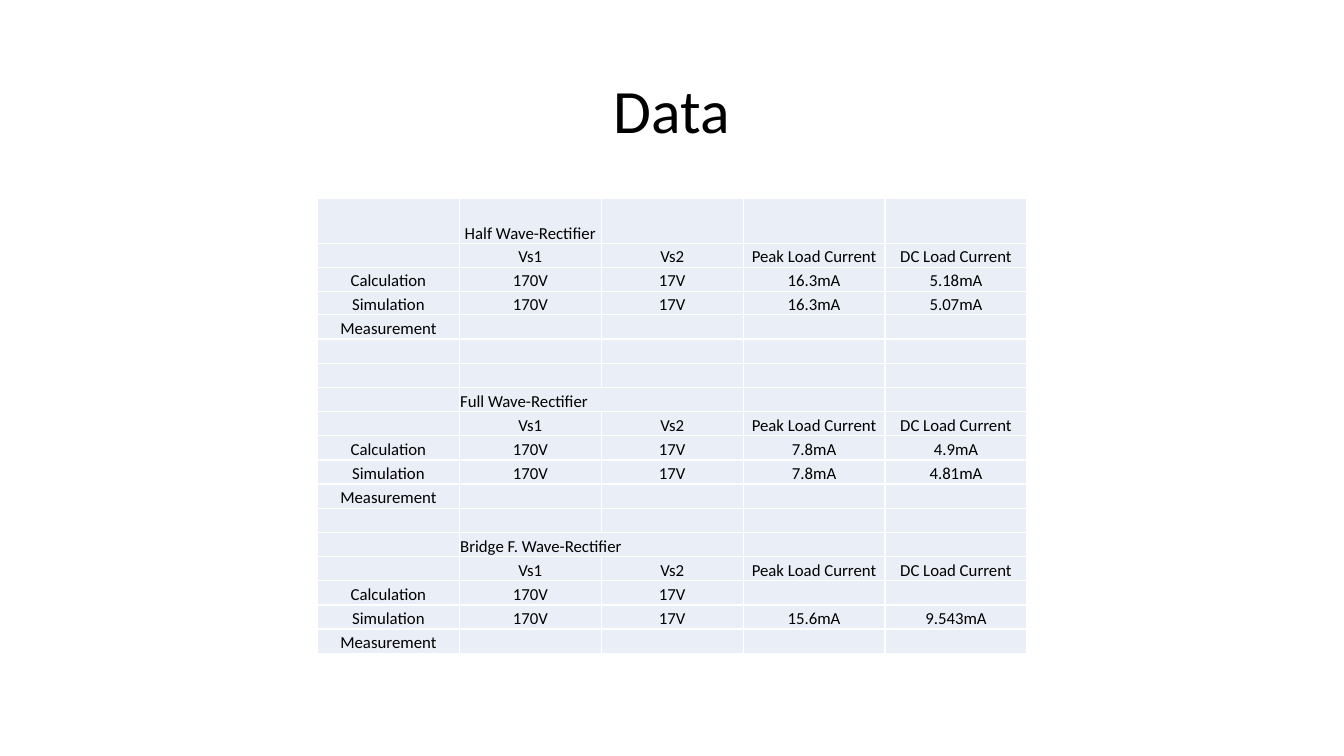
from lxml import etree
from pptx import Presentation
from pptx.dml.color import RGBColor
from pptx.enum.text import MSO_ANCHOR, PP_ALIGN
from pptx.oxml.ns import qn
from pptx.util import Cm, Pt

LEFT, CENTER = PP_ALIGN.LEFT, PP_ALIGN.CENTER
MIDDLE, BOTTOM = MSO_ANCHOR.MIDDLE, MSO_ANCHOR.BOTTOM

TITLE_ONLY = 5
FONT = "Calibri"
TEXT, CELL_FILL, GRID = "000000", "EAEFF7", "FFFFFF"

HEADINGS = ["", "Vs1", "Vs2", "Peak Load Current", "DC Load Current"]
BLANK = [""] * len(HEADINGS)
MEASUREMENT = ["Measurement", "", "", "", ""]


def rectifier_rows(name, calculated, simulated):
    """Rows of one circuit; the load currents are (peak, DC) pairs."""
    return [
        ["", name, "", "", ""],
        HEADINGS,
        ["Calculation", "170V", "17V", *calculated],
        ["Simulation", "170V", "17V", *simulated],
        MEASUREMENT,
    ]


WIDE_NAMES = ["Full Wave-Rectifier", "Bridge F. Wave-Rectifier"]
ROWS = [
    *rectifier_rows("Half Wave-Rectifier", ("16.3mA", "5.18mA"), ("16.3mA", "5.07mA")),
    BLANK,
    BLANK,
    *rectifier_rows(WIDE_NAMES[0], ("7.8mA", "4.9mA"), ("7.8mA", "4.81mA")),
    BLANK,
    *rectifier_rows(WIDE_NAMES[1], ("", ""), ("15.6mA", "9.543mA")),
]
ROW_HEIGHTS = [1.15] + [0.6] * 3 + [0.61] * (len(ROWS) - 4)


def color(hex_code):
    return RGBColor.from_string(hex_code)


def style_paragraph(paragraph, size, alignment):
    paragraph.alignment = alignment
    paragraph.font.name = FONT
    paragraph.font.size = Pt(size)
    paragraph.font.color.rgb = color(TEXT)


def add_borders(cell):
    properties = cell._tc.get_or_add_tcPr()
    for side in ("lnL", "lnR", "lnT", "lnB"):
        border = etree.SubElement(properties, qn(f"a:{side}"), w=str(Pt(1)))
        fill = etree.SubElement(border, qn("a:solidFill"))
        etree.SubElement(fill, qn("a:srgbClr"), val=GRID)


def format_cell(cell, text):
    cell.text = text
    cell.vertical_anchor = BOTTOM
    cell.margin_left = cell.margin_right = cell.margin_top = Cm(0.02)
    cell.margin_bottom = 0
    style_paragraph(cell.text_frame.paragraphs[0], 12,
                    LEFT if text in WIDE_NAMES else CENTER)
    add_borders(cell)
    cell.fill.solid()
    cell.fill.fore_color.rgb = color(CELL_FILL)


def place_title(slide, left, top, width, height):
    title = slide.shapes.title
    title.left, title.top, title.width, title.height = left, top, width, height
    title.text_frame.text = "Data"
    title.text_frame.vertical_anchor = MIDDLE
    heading = title.text_frame.paragraphs[0]
    heading.line_spacing = 0.9
    style_paragraph(heading, 44, CENTER)


def add_measurements(slide, left, top, width, height):
    table = slide.shapes.add_table(
        len(ROWS), len(HEADINGS), left, top, width, height).table
    table.first_row = table.horz_banding = False
    for column in table.columns:
        column.width = width // len(HEADINGS)
    for row_index, (values, share) in enumerate(zip(ROWS, ROW_HEIGHTS)):
        table.rows[row_index].height = int(height * share / sum(ROW_HEIGHTS))
        for column_index, text in enumerate(values):
            format_cell(table.cell(row_index, column_index), text)
        if values[1] in WIDE_NAMES:
            table.cell(row_index, 1).merge(table.cell(row_index, 2))


def main():
    presentation = Presentation()
    presentation.slide_width, presentation.slide_height = Cm(33.87), Cm(19.05)
    slide = presentation.slides.add_slide(presentation.slide_layouts[TITLE_ONLY])
    place_title(slide, Cm(2.33), Cm(1.01), Cm(29.21), Cm(3.68))
    add_measurements(slide, Cm(8), Cm(4.99), Cm(17.88), Cm(11.48))
    presentation.save("out.pptx")


if __name__ == "__main__":
    main()
